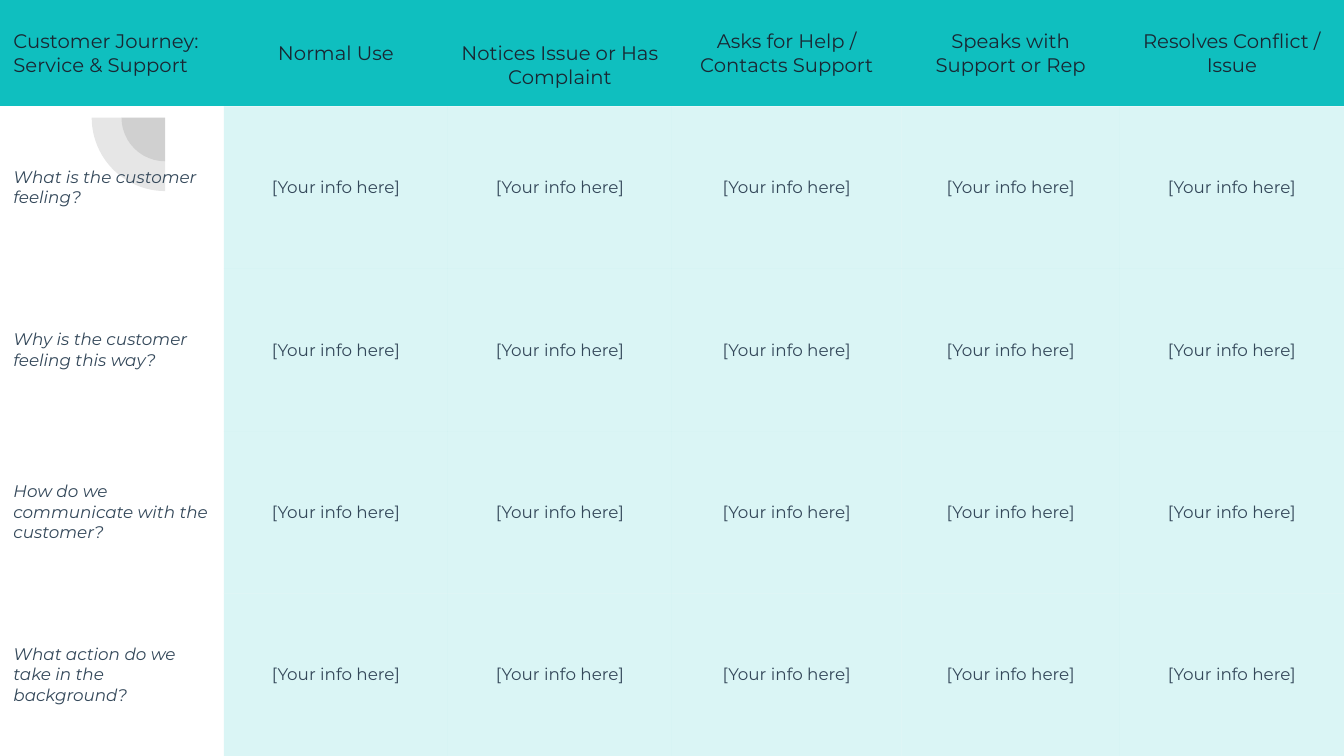
from pptx import Presentation
from pptx.dml.color import RGBColor
from pptx.enum.shapes import MSO_SHAPE as Preset
from pptx.enum.text import MSO_ANCHOR as Anchor, PP_ALIGN as Align
from pptx.oxml.ns import qn
from pptx.util import Pt
from lxml.etree import SubElement

FONT = "Montserrat"
NO_GRID_STYLE = "{2D5ABB26-0587-4C30-8999-92F81FD0307C}"
MARGIN = 9.6
HEADER_LINE = 17
COLUMN_WIDTHS = [160, 160, 160, 164, 156, 160]
ROW_HEIGHTS = [76, 116, 116, 116, 116]

TITLE = "Customer Journey: Service & Support"
STAGES = [
    "Normal Use",
    "Notices Issue or Has Complaint",
    "Asks for Help / Contacts Support",
    "Speaks with Support or Rep",
    "Resolves Conflict / Issue",
]
QUESTIONS = [
    "What is the customer feeling?",
    "Why is the customer feeling this way?",
    "How do we communicate with the customer?",
    "What action do we take in the background?",
]
ENTRY = "[Your info here]"


def color(hex_value):
    return RGBColor.from_string(hex_value)


def paint(filled, properties, hex_value, opacity=100):
    """Fill a shape or cell; properties is its XML element holding the fill."""
    filled.fill.solid()
    filled.fill.fore_color.rgb = color(hex_value)
    if opacity < 100:
        rgb = properties.find(qn("a:solidFill")).find(qn("a:srgbClr"))
        SubElement(rgb, qn("a:alpha"), val=str(opacity * 1000))


def write_cell(cell, text, size, hex_value, align=Align.CENTER, italic=False):
    cell.text = text
    cell.vertical_anchor = Anchor.MIDDLE
    cell.margin_left = cell.margin_right = Pt(MARGIN)
    cell.margin_top = cell.margin_bottom = Pt(MARGIN)
    paragraph = cell.text_frame.paragraphs[0]
    paragraph.alignment = align
    font = paragraph.font
    font.name, font.size, font.italic = FONT, Pt(size), italic
    font.color.rgb = color(hex_value)


def add_quarter_circles(slide, center_x, center_y, radii):
    """Overlapping translucent quarters, below and left of the center."""
    for radius in radii:
        quarter = slide.shapes.add_shape(
            Preset.PIE, Pt(center_x - radius), Pt(center_y - radius),
            Pt(2 * radius), Pt(2 * radius))
        quarter.adjustments[0], quarter.adjustments[1] = 108, 162
        quarter.rotation = 270
        quarter.shadow.inherit = False
        quarter.line.fill.background()
        paint(quarter, quarter._element.spPr, "424242", 13)


def add_journey_table(slide, left, top):
    frame = slide.shapes.add_table(
        len(ROW_HEIGHTS), len(COLUMN_WIDTHS), Pt(left), Pt(top),
        Pt(sum(COLUMN_WIDTHS)), Pt(sum(ROW_HEIGHTS)))
    table = frame.table
    table.first_row = table.horz_banding = False
    table._tbl.tblPr.find(qn("a:tableStyleId")).text = NO_GRID_STYLE
    for column, width in zip(table.columns, COLUMN_WIDTHS):
        column.width = Pt(width)
    for row, height in zip(table.rows, ROW_HEIGHTS):
        row.height = Pt(height)

    # Header row
    for index, text in enumerate([TITLE] + STAGES):
        cell = table.cell(0, index)
        write_cell(cell, text, 14, "192733", Align.CENTER if index else Align.LEFT)
        paint(cell, cell._tc.tcPr, "0FBFBF")
    # The complaint stage sits half a line lower than the others
    table.cell(0, 2).margin_top = Pt(MARGIN + HEADER_LINE)

    # Questions and their entries
    for row_index, question in enumerate(QUESTIONS, 1):
        heading = table.cell(row_index, 0)
        write_cell(heading, question, 12, "34485A", Align.LEFT, italic=True)
        heading.fill.background()
        for column_index in range(1, len(COLUMN_WIDTHS)):
            cell = table.cell(row_index, column_index)
            write_cell(cell, ENTRY, 12, "34485A")
            paint(cell, cell._tc.tcPr, "B7ECEC", 50)


def main():
    presentation = Presentation()
    presentation.slide_width, presentation.slide_height = Pt(960), Pt(540)
    slide = presentation.slides.add_slide(presentation.slide_layouts[6])
    add_quarter_circles(slide, 118, 84, [31.2, 52.5])
    add_journey_table(slide, 0, 0)
    presentation.save("out.pptx")


if __name__ == "__main__":
    main()
